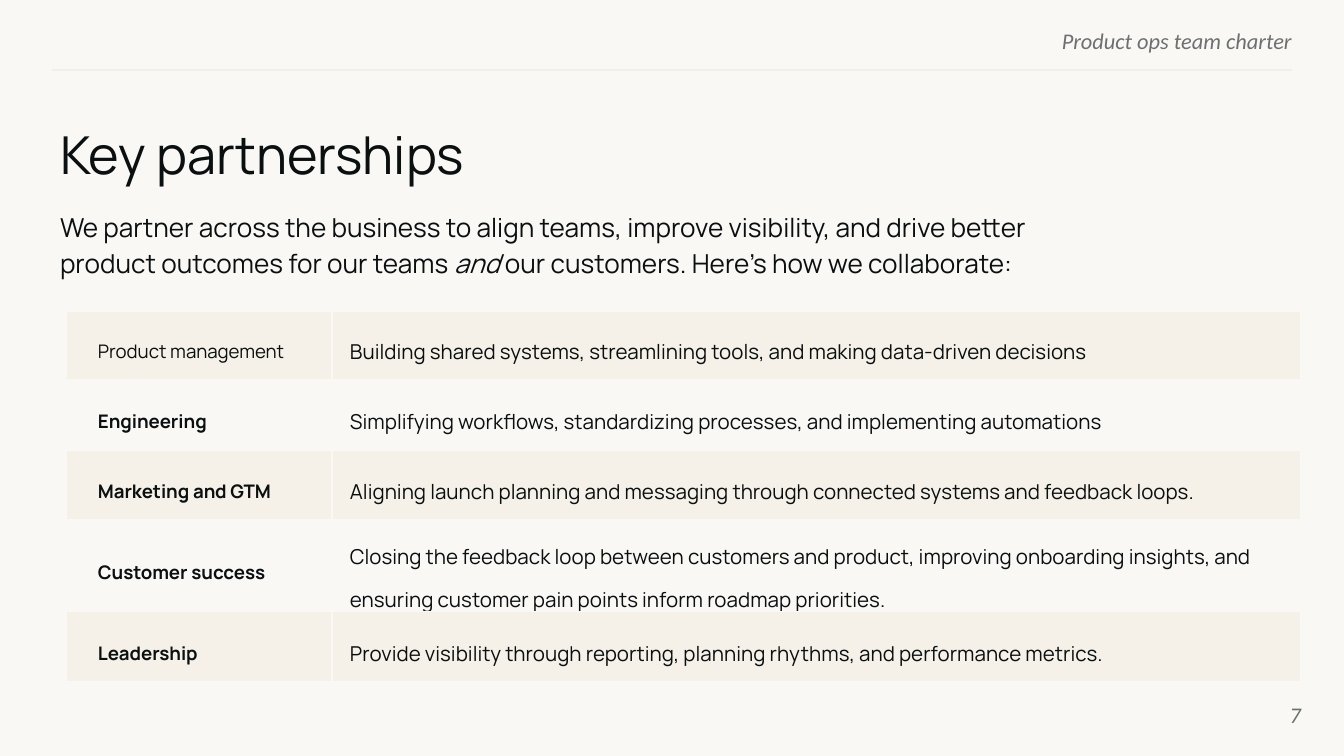
import pptx
import pptx.dml.color
import pptx.enum.shapes
import pptx.enum.text
import pptx.oxml
import pptx.oxml.ns
import pptx.util

RGBColor = pptx.dml.color.RGBColor
PP_ALIGN = pptx.enum.text.PP_ALIGN
MSO_ANCHOR = pptx.enum.text.MSO_ANCHOR

PAPER = RGBColor(0xF9, 0xF8, 0xF5)
SAND = RGBColor(0xF5, 0xF1, 0xE8)
INK = RGBColor(0x09, 0x10, 0x0F)
GREY = RGBColor(0x6C, 0x70, 0x6F)
RULE = RGBColor(0xEF, 0xEF, 0xEF)

EMU_PER_PX = 9144000 / 1344

PARTNERS = [
    ("Product management",
     "Building shared systems, streamlining tools, and making data-driven decisions"),
    ("Engineering",
     "Simplifying workflows, standardizing processes, and implementing automations"),
    ("Marketing and GTM",
     "Aligning launch planning and messaging through connected systems and feedback loops."),
    ("Customer success",
     "Closing the feedback loop between customers and product, improving onboarding "
     "insights, and ensuring customer pain points inform roadmap priorities."),
    ("Leadership",
     "Provide visibility through reporting, planning rhythms, and performance metrics."),
]
ROW_HEIGHTS = [70, 70, 70, 86, 70]
COLUMN_WIDTHS = [266, 969]


def px(length):
    return pptx.util.Emu(round(length * EMU_PER_PX))


def style_run(run, size, color=INK, font="Manrope", bold=False, italic=False):
    run.font.size = pptx.util.Pt(size)
    run.font.name = font
    run.font.color.rgb = color
    run.font.bold = bold
    run.font.italic = italic


def set_margins(target, left, top, right, bottom):
    target.margin_left, target.margin_top = px(left), px(top)
    target.margin_right, target.margin_bottom = px(right), px(bottom)


def add_text(slide, left, top, width, height, anchor=MSO_ANCHOR.TOP):
    """Add an empty text box without insets and return its paragraph."""
    frame = slide.shapes.add_textbox(px(left), px(top), px(width), px(height)).text_frame
    frame.word_wrap = True
    frame.vertical_anchor = anchor
    set_margins(frame, 0, 0, 0, 0)
    return frame.paragraphs[0]


def add_margin_note(slide, text, *box, anchor=MSO_ANCHOR.TOP):
    note = add_text(slide, *box, anchor=anchor)
    note.text = text
    note.alignment = PP_ALIGN.RIGHT
    style_run(note.runs[0], 12, GREY, "Calibri", italic=True)


def add_rule(slide, left, right, y):
    rule = slide.shapes.add_connector(
        pptx.enum.shapes.MSO_CONNECTOR.STRAIGHT, px(right), px(y), px(left), px(y))
    rule.line.color.rgb = RULE
    rule.line.width = pptx.util.Pt(0.75)
    rule._element.spPr.append(pptx.oxml.parse_xml(
        f'<a:effectLst {pptx.oxml.ns.nsdecls("a")}/>'))


def add_title(slide):
    title = add_text(slide, 60, 122, 1240, 69)
    title.text = "Key partnerships"
    title.space_after = pptx.util.Pt(10)
    style_run(title.runs[0], 28)


def add_intro(slide):
    intro = add_text(slide, 60, 207, 1240, 89)
    intro.text = ("We partner across the business to align teams, improve visibility, "
                  "and drive better \vproduct outcomes for our teams ")
    for words in ("and", " our customers. Here’s how we collaborate:"):
        intro.add_run().text = words
    intro.line_spacing = 1.15
    intro.space_after = pptx.util.Pt(10)
    for run in intro.runs:
        style_run(run, 14, italic=run.text == "and")


def set_borders(cell, top_width):
    """Draw all four borders in the paper colour; they must precede the fill."""
    properties = cell._tc.get_or_add_tcPr()
    widths = {"lnL": 0.75, "lnR": 0.75, "lnT": top_width, "lnB": 0.75}
    for position, (side, width) in enumerate(widths.items()):
        properties.insert(position, pptx.oxml.parse_xml(
            f'<a:{side} {pptx.oxml.ns.nsdecls("a")} w="{pptx.util.Pt(width)}">'
            f'<a:solidFill><a:srgbClr val="{PAPER}"/></a:solidFill></a:{side}>'))


def fill_cell(cell, text, size, bold, fill, margins, top_width):
    cell.text_frame.text = text
    cell.vertical_anchor = MSO_ANCHOR.MIDDLE
    set_margins(cell, *margins)
    cell.fill.solid()
    cell.fill.fore_color.rgb = fill
    set_borders(cell, top_width)
    paragraph = cell.text_frame.paragraphs[0]
    paragraph.line_spacing = 1.5
    style_run(paragraph.runs[0], size, bold=bold)


def add_partner_table(slide):
    table = slide.shapes.add_table(
        len(PARTNERS), len(COLUMN_WIDTHS), px(66), px(310),
        px(sum(COLUMN_WIDTHS)), px(sum(ROW_HEIGHTS))).table
    table.first_row = table.horz_banding = False
    for column, width in zip(table.columns, COLUMN_WIDTHS):
        column.width = px(width)
    for index, (partner, purpose) in enumerate(PARTNERS):
        table.rows[index].height = px(ROW_HEIGHTS[index])
        fill = PAPER if index % 2 else SAND
        top_width = 0.75 if index else 2.25
        # The first partner is set in regular weight
        fill_cell(table.cell(index, 0), partner, 10, index > 0, fill,
                  (32, 0, 0, 0), top_width)
        fill_cell(table.cell(index, 1), purpose, 11, False, fill,
                  (18, 9, 18, 9), top_width)


def main():
    deck = pptx.Presentation()
    deck.slide_width, deck.slide_height = px(1344), px(756)
    slide = deck.slides.add_slide(deck.slide_layouts[6])
    slide.background.fill.solid()
    slide.background.fill.fore_color.rgb = PAPER

    # Header
    add_margin_note(slide, "Product ops team charter", 774, 27, 518, 24)
    add_rule(slide, 52, 1292, 70)

    # Body
    add_title(slide)
    add_intro(slide)
    add_partner_table(slide)

    # Page number
    add_margin_note(slide, "7", 1220, 686, 81, 58, anchor=MSO_ANCHOR.MIDDLE)

    deck.save("out.pptx")


if __name__ == "__main__":
    main()
